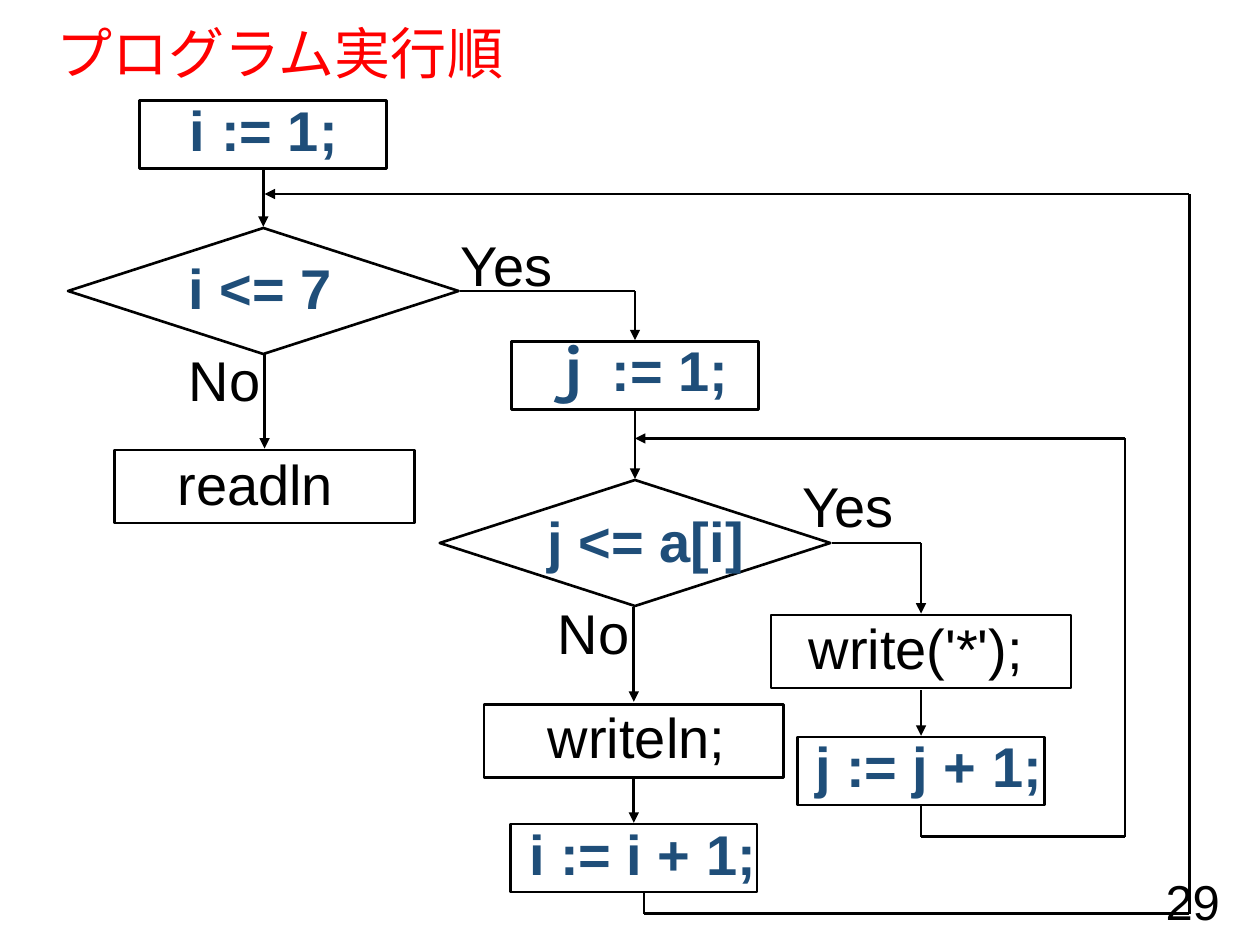
from itertools import pairwise

from lxml import etree
from pptx import Presentation
from pptx.dml.color import RGBColor
from pptx.enum import shapes, text
from pptx.oxml.ns import qn
from pptx.util import Inches, Pt

BLACK, RED, NAVY = "000000", "FF0000", "1F4E79"
ASSIGN, CALL, DECISION = (1.96, 0.54), (2.38, 0.58), (3.1, 1)

STEPS = [
    (ASSIGN, 1.11, 0.8),
    (DECISION, 0.54, 1.81),
    (CALL, 0.91, 3.57),
    (ASSIGN, 4.06, 2.71),
    (DECISION, 3.49, 3.81),
    (CALL, 6.12, 4.88),
    (ASSIGN, 6.33, 5.85),
    (CALL, 3.84, 5.59),
    (ASSIGN, 4.05, 6.54),
]

CONDITIONS = [
    ("i <= 7", 1.4, 1.96, 1.5),
    ("j <= a[i]", 4.25, 3.97, 1.9),
]
ASSIGNMENTS = [
    ("i := 1;", 1.41, 0.81, 1.5),
    ("ｊ := 1;", 4.21, 2.72, 2.31),
    ("j := j + 1;", 6.37, 5.86, 2.25),
    ("i := i + 1;", 4.1, 6.56, 2.18),
]
LABELS = [
    ("Yes", 3.56, 1.78, 1),
    ("No", 1.4, 2.69, 0.9),
    ("Yes", 6.27, 3.69, 1),
    ("No", 4.33, 4.7, 0.9),
    ("readln", 1.31, 3.52, 1.6),
    ("writeln;", 4.25, 5.53, 1.8),
    ("write('*');", 6.32, 4.82, 2.1),
]

FLOWS = [
    [(2.09, 1.34), (2.09, 1.8)],
    [(2.1, 2.81), (2.1, 3.56)],
    [(3.65, 2.31), (5.04, 2.31), (5.04, 2.7)],
    [(5.04, 3.26), (5.04, 3.8)],
    [(5.03, 4.82), (5.03, 5.57)],
    [(6.6, 4.31), (7.31, 4.31), (7.31, 4.87)],
    [(7.31, 5.48), (7.31, 5.84)],
    [(5.03, 6.18), (5.03, 6.53)],
    [(7.31, 6.4), (7.31, 6.64), (8.93, 6.64), (8.93, 3.48), (5.04, 3.48)],
    [(5.11, 7.08), (5.11, 7.25), (9.44, 7.25), (9.44, 1.54), (2.1, 1.54)],
]


def rgb(value):
    return RGBColor.from_string(value)


def add_text(slide, content, left, top, width, height=0.64, size=32, color=BLACK,
             bold=False, spacing=None, align=text.PP_ALIGN.LEFT,
             anchor=text.MSO_ANCHOR.TOP):
    box = slide.shapes.add_textbox(*map(Inches, (left, top, width, height)))
    frame = box.text_frame
    frame.word_wrap = True
    frame.vertical_anchor = anchor
    paragraph = frame.paragraphs[0]
    paragraph.alignment = align
    if spacing:
        paragraph.line_spacing = spacing
    run = paragraph.add_run()
    run.text = content
    run.font.name = "Arial"
    run.font.size = Pt(size)
    run.font.bold = bold
    run.font.color.rgb = rgb(color)


def add_step(slide, kind, left, top):
    preset = shapes.MSO_SHAPE.FLOWCHART_DECISION if kind == DECISION else shapes.MSO_SHAPE.RECTANGLE
    step = slide.shapes.add_shape(preset, *map(Inches, (left, top, *kind)))
    step.shadow.inherit = False
    step.fill.background()
    step.line.color.rgb = rgb(BLACK)
    step.line.width = Pt(1.5)


def add_flow(slide, points):
    for start, end in pairwise(points):
        segment = slide.shapes.add_connector(
            shapes.MSO_CONNECTOR.STRAIGHT, *map(Inches, (*start, *end)))
        segment.line.color.rgb = rgb(BLACK)
        segment.line.width = Pt(1.5)
        properties = segment._element.spPr
        etree.SubElement(properties, qn("a:effectLst"))
    etree.SubElement(properties.find(qn("a:ln")), qn("a:tailEnd"), type="triangle")


def main():
    deck = Presentation()
    deck.slide_width, deck.slide_height = Inches(10), Inches(7.5)
    slide = deck.slides.add_slide(deck.slide_layouts[6])

    add_text(slide, "プログラム実行順", 0.35, 0.19, 9.25, 0.51, color=RED,
             spacing=0.9, anchor=text.MSO_ANCHOR.MIDDLE)
    for step in STEPS:
        add_step(slide, *step)
    for points in FLOWS:
        add_flow(slide, points)
    for condition in CONDITIONS:
        add_text(slide, *condition, color=NAVY, bold=True)
    for assignment in ASSIGNMENTS:
        add_text(slide, *assignment, color=NAVY, bold=True, spacing=0.8)
    for label in LABELS:
        add_text(slide, *label)
    add_text(slide, "29", 7.53, 6.95, 2.25, 0.4, size=28,
             align=text.PP_ALIGN.RIGHT, anchor=text.MSO_ANCHOR.MIDDLE)

    deck.save("out.pptx")


if __name__ == "__main__":
    main()
